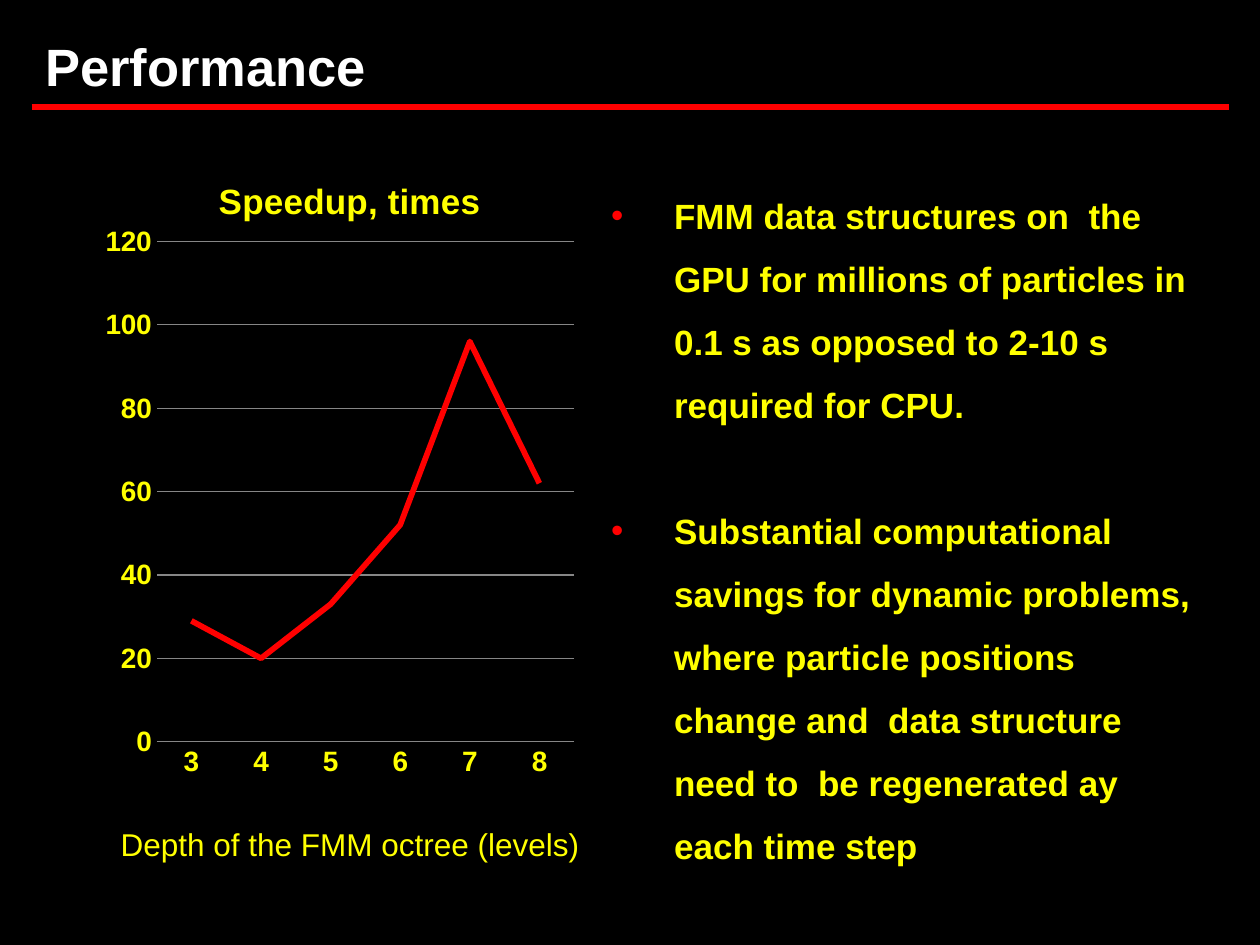
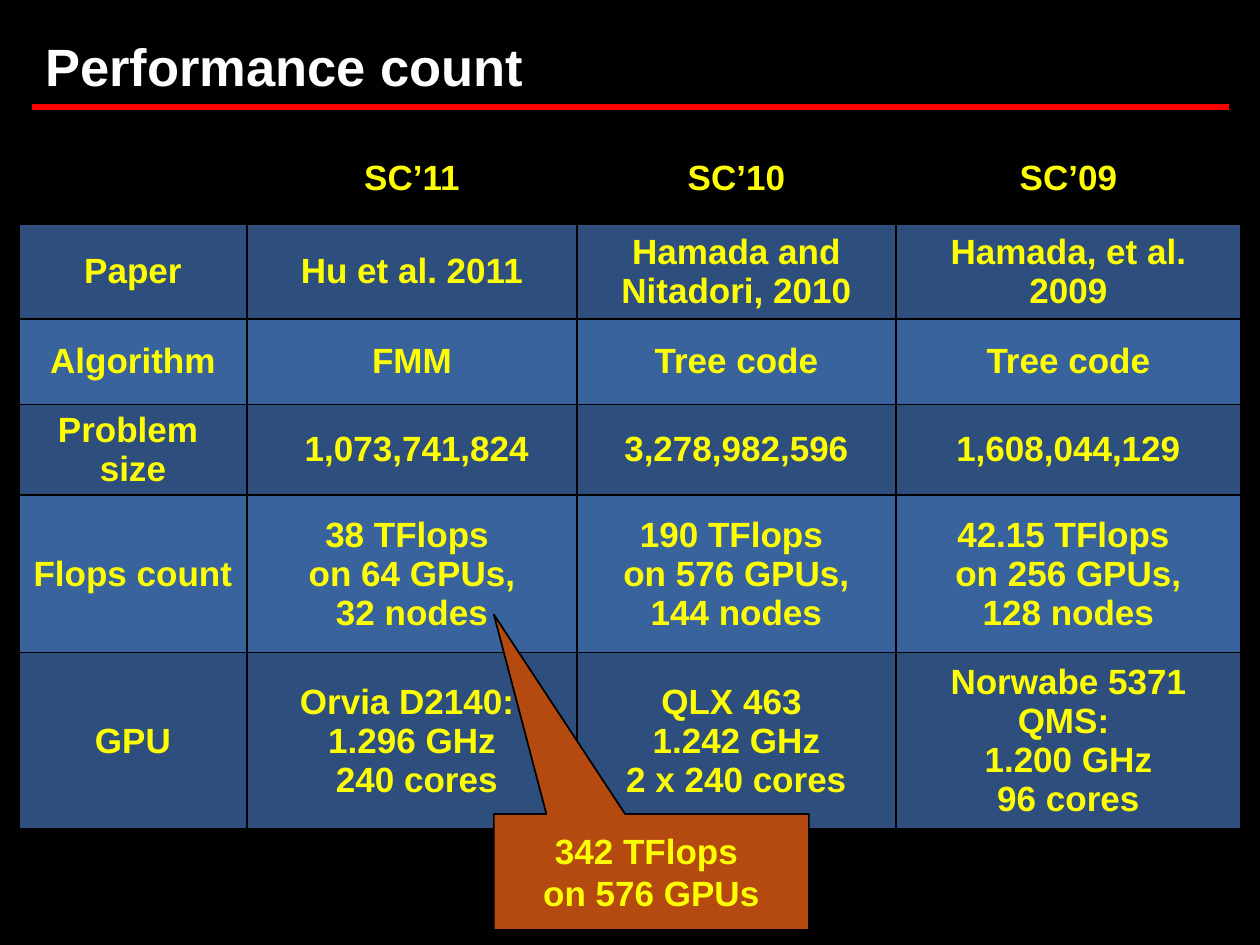
from dataclasses import dataclass
from typing import NamedTuple

from lxml.etree import SubElement
from pptx import Presentation
from pptx.chart.data import CategoryChartData
from pptx.dml.color import RGBColor
from pptx.enum.chart import XL_CHART_TYPE as ChartType, XL_TICK_MARK as Tick
from pptx.enum.shapes import MSO_CONNECTOR as Connector, MSO_SHAPE as Shape
from pptx.enum.text import MSO_ANCHOR as Anchor, MSO_AUTO_SIZE as AutoSize, PP_ALIGN as Align
from pptx.oxml import parse_xml
from pptx.oxml.ns import nsdecls, qn
from pptx.util import Inches, Length, Pt


def rgb(value: str) -> RGBColor:
    return RGBColor.from_string(value)


@dataclass(frozen=True)
class Theme:
    font: str = "Arial"
    black: RGBColor = rgb("000000")
    white: RGBColor = rgb("FFFFFF")
    yellow: RGBColor = rgb("FFFF00")
    red: RGBColor = rgb("FF0000")
    grid: RGBColor = rgb("868686")
    dark_band: RGBColor = rgb("2E4F7E")
    light_band: RGBColor = rgb("39639D")
    callout: RGBColor = rgb("B54A10")
    title_size: Length = Pt(30)
    body_size: Length = Pt(20)
    caption_size: Length = Pt(18)
    axis_size: Length = Pt(16)


class Box(NamedTuple):
    left: float
    top: float
    width: float
    height: float

    def lengths(self) -> tuple[Length, ...]:
        return tuple(Inches(n) for n in self)


class Column(NamedTuple):
    width: float
    cells: tuple[str, ...]


THEME = Theme()
TITLE_BOX = Box(0.26, 0.06, 9.47, 0.92)
LIST_BOX = Box(4.75, 1.33, 4.92, 5.65)
CHART_BOX = Box(0.58, 1, 4.42, 6.11)
CAPTION_BOX = Box(0.86, 6.5, 3.88, 0.4)
CALLOUT_BOX = Box(3.92, 6.46, 2.5, 0.92)
TABLE_CORNER = (0.15, 1.05)

SPEEDUP_BY_DEPTH = {"3": 29, "4": 20, "5": 33, "6": 52, "7": 96, "8": 62}
FINDINGS = (
    "FMM data structures on  the GPU for millions of particles in  0.1 s "
    "as opposed to 2-10 s required for CPU.",
    "Substantial computational savings for dynamic problems, where particle positions "
    "change and  data structure need to  be regenerated ay each time step",
)
ROW_HEIGHTS = (0.73, 0.75, 0.68, 0.72, 1.25, 1.4)
COLUMNS = (
    Column(1.81, ("", "Paper", "Algorithm", "Problem \nsize", "Flops count", "GPU")),
    Column(2.62, ("SC’11", "Hu et al. 2011", "FMM", " 1,073,741,824",
                  "38 TFlops \non 64 GPUs,\n32 nodes",
                  "Orvia D2140: \n1.296 GHz\n 240 cores")),
    Column(2.53, ("SC’10", "Hamada and Nitadori, 2010", "Tree code", "3,278,982,596",
                  "190 TFlops \non 576 GPUs,\n144 nodes",
                  "QLX 463 \n1.242 GHz\n2 x 240 cores")),
    Column(2.74, ("SC’09", "Hamada, et al. 2009", "Tree code", "1,608,044,129",
                  "42.15 TFlops \non 256 GPUs,\n128 nodes",
                  "Norwabe 5371 QMS: \n1.200 GHz\n96 cores")),
)


def style_font(font, size: Length, color: RGBColor = THEME.yellow, bold: bool = True) -> None:
    font.name, font.size, font.bold = THEME.font, size, bold
    font.color.rgb = color


def write(tf, text: str, size: Length = THEME.body_size, color: RGBColor = THEME.yellow,
          bold: bool = True, align: Align = Align.LEFT) -> None:
    tf.text = text
    for p in tf.paragraphs:
        p.alignment = align
        for r in p.runs:
            style_font(r.font, size, color, bold)


def place(sp, box: Box) -> None:
    sp.left, sp.top, sp.width, sp.height = box.lengths()


def add_titled_slide(prs, layout_index: int, title: str):
    """Add a slide with the shared title and the red rule under it."""
    s = prs.slides.add_slide(prs.slide_layouts[layout_index])
    rule = s.shapes.add_connector(Connector.STRAIGHT, Inches(0.25), Inches(0.85),
                                  Inches(9.75), Inches(0.85))
    rule.line.color.rgb, rule.line.width = THEME.red, Pt(3)
    SubElement(rule._element.spPr, qn("a:effectLst"))
    place(s.shapes.title, TITLE_BOX)
    tf = s.shapes.title.text_frame
    tf.vertical_anchor, tf.auto_size = Anchor.MIDDLE, AutoSize.NONE
    write(tf, title, THEME.title_size, THEME.white)
    return s


def fill_list(sp, items: tuple[str, ...]) -> None:
    place(sp, LIST_BOX)
    tf = sp.text_frame
    tf.auto_size, tf.vertical_anchor = AutoSize.NONE, Anchor.TOP
    write(tf, "\n".join(items))
    for i, p in enumerate(tf.paragraphs):
        p.line_spacing = Pt(36)
        p.space_before = Pt(36 if i else 0)
        pPr = p._p.get_or_add_pPr()
        pPr.set("marL", str(Inches(0.5)))
        pPr.set("indent", str(-Inches(0.5)))
        color = SubElement(pPr, qn("a:buClr"))
        SubElement(color, qn("a:srgbClr"), val=str(THEME.red))
        SubElement(pPr, qn("a:buFont"), typeface=THEME.font)
        SubElement(pPr, qn("a:buChar"), char="•")


def set_layout(element, **values: str | float) -> None:
    """Give a chart title or plot area a manual layout, in fractions of the chart."""
    for old in element.findall(qn("c:layout")):
        element.remove(old)
    items = "".join(f'<c:{name} val="{value}"/>' for name, value in values.items())
    layout = parse_xml(f'<c:layout {nsdecls("c")}><c:manualLayout>{items}'
                       "</c:manualLayout></c:layout>")
    text = element.find(qn("c:tx"))
    element.insert(0 if text is None else 1, layout)


def add_speedup_chart(s) -> None:
    data = CategoryChartData()
    data.categories = list(SPEEDUP_BY_DEPTH)
    data.add_series("Series 1", list(SPEEDUP_BY_DEPTH.values()))
    chart = s.shapes.add_chart(ChartType.LINE, *CHART_BOX.lengths(), data).chart
    chart.has_legend = False
    style_font(chart.font, THEME.axis_size)

    write(chart.chart_title.text_frame, "Speedup, times", align=Align.CENTER)
    chart.chart_title.include_in_layout = False
    set_layout(chart.chart_title._element, xMode="edge", yMode="edge", x=0.25, y=0.06)
    set_layout(chart._chartSpace.chart.plotArea, layoutTarget="inner", xMode="edge",
               yMode="edge", x=0.15, y=0.15, w=0.75, h=0.65)

    for axis in (chart.category_axis, chart.value_axis):
        axis.major_tick_mark = axis.minor_tick_mark = Tick.NONE
        style_font(axis.tick_labels.font, THEME.axis_size)
    values = chart.value_axis
    values.minimum_scale, values.maximum_scale, values.major_unit = 0, 120, 20
    values.format.line.fill.background()
    for line in (values.major_gridlines.format.line, chart.category_axis.format.line):
        line.color.rgb, line.width = THEME.grid, Pt(0.75)

    plot = chart.plots[0]
    plot.vary_by_categories = False
    series = plot.series[0]
    series.smooth = False
    series.format.line.color.rgb, series.format.line.width = THEME.red, Pt(3.25)


def add_caption(s, text: str) -> None:
    tf = s.shapes.add_textbox(*CAPTION_BOX.lengths()).text_frame
    tf.word_wrap = False
    write(tf, text, THEME.caption_size, bold=False)


def set_borders(cell) -> None:
    tcPr = cell._tc.get_or_add_tcPr()
    for i, side in enumerate("LRTB"):
        tcPr.insert(i, parse_xml(
            f'<a:ln{side} {nsdecls("a")} w="{Pt(1)}"><a:solidFill>'
            f'<a:srgbClr val="{THEME.black}"/></a:solidFill></a:ln{side}>'))


def row_color(row: int) -> RGBColor:
    if row == 0:
        return THEME.black
    return THEME.dark_band if row % 2 else THEME.light_band


def add_comparison_table(s) -> None:
    box = Box(*TABLE_CORNER, sum(c.width for c in COLUMNS), sum(ROW_HEIGHTS))
    table = s.shapes.add_table(len(ROW_HEIGHTS), len(COLUMNS), *box.lengths()).table
    table.first_row = table.horz_banding = False
    for row, height in zip(table.rows, ROW_HEIGHTS):
        row.height = Inches(height)
    for c, column in enumerate(COLUMNS):
        table.columns[c].width = Inches(column.width)
        for r, text in enumerate(column.cells):
            cell = table.cell(r, c)
            cell.fill.solid()
            cell.fill.fore_color.rgb = row_color(r)
            cell.vertical_anchor = Anchor.MIDDLE
            set_borders(cell)
            write(cell.text_frame, text, align=Align.CENTER)


def add_callout(s, text: str) -> None:
    sp = s.shapes.add_shape(Shape.RECTANGULAR_CALLOUT, *CALLOUT_BOX.lengths())
    sp.adjustments[0], sp.adjustments[1] = -0.5, -2.22
    sp.shadow.inherit = False
    sp.fill.solid()
    sp.fill.fore_color.rgb = THEME.callout
    sp.line.color.rgb, sp.line.width = THEME.black, Pt(1)
    tf = sp.text_frame
    tf.word_wrap, tf.vertical_anchor = False, Anchor.MIDDLE
    write(tf, text, align=Align.CENTER)


def main() -> None:
    prs = Presentation()
    prs.slide_width, prs.slide_height = Inches(10), Inches(7.5)
    background = prs.slide_master.background.fill
    background.solid()
    background.fore_color.rgb = THEME.black

    s = add_titled_slide(prs, 1, "Performance")
    add_speedup_chart(s)
    add_caption(s, "Depth of the FMM octree (levels)")
    fill_list(s.placeholders[1], FINDINGS)

    s = add_titled_slide(prs, 5, "Performance count")
    add_comparison_table(s)
    add_callout(s, "342 TFlops \non 576 GPUs")

    prs.save("out.pptx")


if __name__ == "__main__":
    main()
